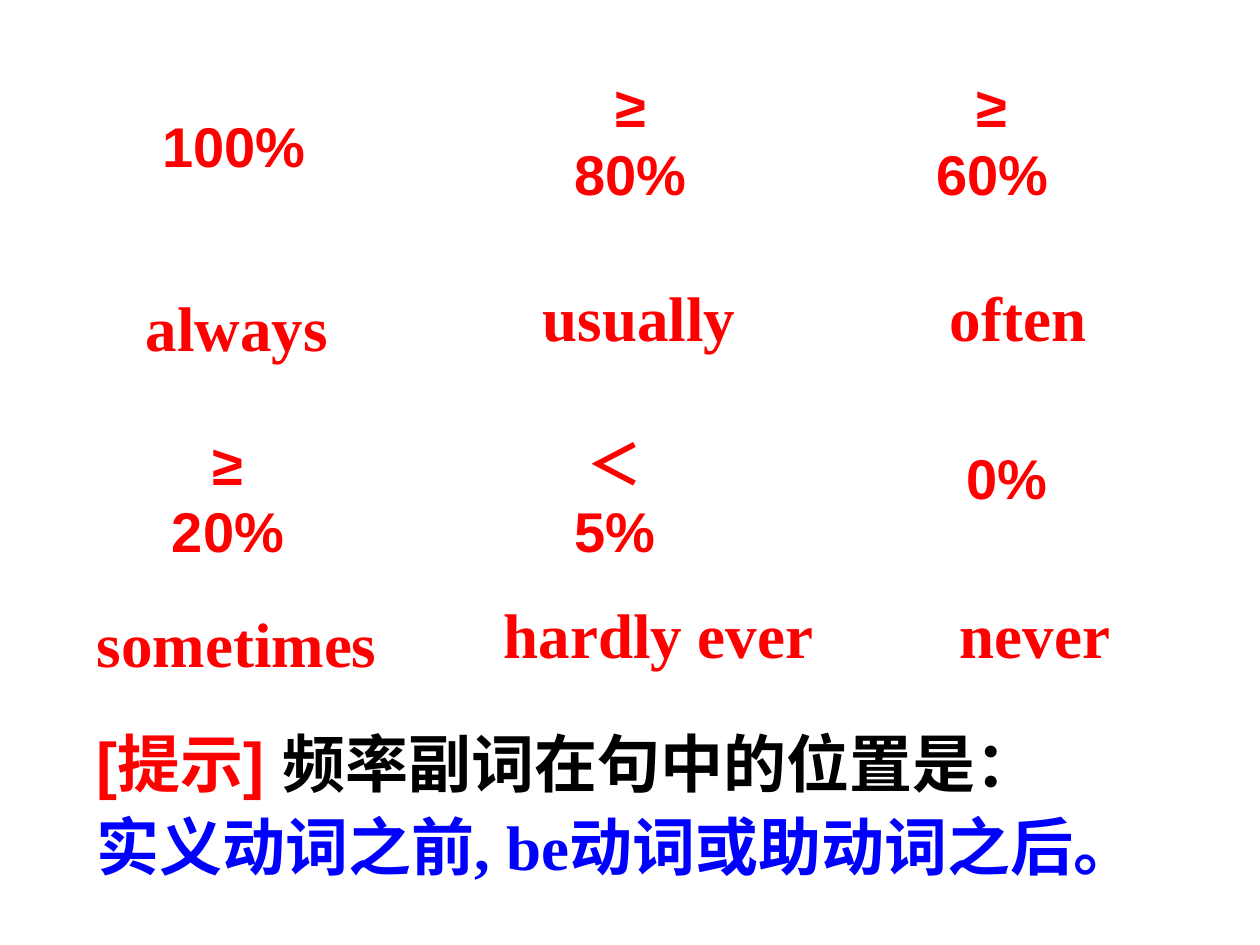
import pptx
import pptx.dml.color
import pptx.enum.shapes
import pptx.enum.text
import pptx.util

PX = 9144  # EMU in one px, 100 px to the inch
COLORS = {"red": "FF0000", "black": "000000", "blue": "0000FF"}


def add_span(para, text, font_name, size, color):
    span = para.add_run()
    span.text = text
    formats = {"name": font_name, "size": pptx.util.Pt(size), "bold": True}
    for name, value in formats.items():
        setattr(span.font, name, value)
    span.font.color.rgb = pptx.dml.color.RGBColor.from_string(COLORS[color])


deck = pptx.Presentation()
deck.slide_width, deck.slide_height = 1000 * PX, 750 * PX
page = deck.slides.add_slide(deck.slide_layouts[6])

# Share of the time: text, left, top, width, height
percentages = [
    ("100%", 91, 29, 189, 173),
    ("≥ 80%", 406, 28, 189, 165),
    ("≥ 60%", 697, 28, 181, 165),
    ("≥ 20%", 91, 312, 180, 164),
    ("＜ 5%", 398, 312, 180, 164),
    ("0%", 713, 304, 173, 150),
]
for text, *place in percentages:
    oval = page.shapes.add_shape(
        pptx.enum.shapes.MSO_SHAPE.OVAL, *(length * PX for length in place)
    )
    oval.shadow.inherit = False
    oval.fill.background()
    oval.line.fill.background()
    oval.text_frame.word_wrap = True
    oval.text_frame.vertical_anchor = pptx.enum.text.MSO_ANCHOR.MIDDLE
    para = oval.text_frame.paragraphs[0]
    para.alignment = pptx.enum.text.PP_ALIGN.CENTER
    add_span(para, text, "Arial", 32, "red")

# Adverb under each share: text, left, top, width
adverbs = [
    ("always", 106, 218, 181),
    ("usually", 421, 210, 189),
    ("often", 744, 210, 165),
    ("sometimes", 67, 469, 264),
    ("hardly ever", 390, 462, 283),
    ("never", 752, 462, 142),
]
for text, left, top, width in adverbs:
    box = page.shapes.add_textbox(left * PX, top * PX, width * PX, 70 * PX)
    box.text_frame.word_wrap = True
    box.text_frame.margin_top = 11 * PX
    add_span(box.text_frame.paragraphs[0], text, "Times New Roman", 36, "red")

# Grammar tip, one list of spans for each line
tip_lines = [
    [
        ("[提示] ", "Arial", "red"),
        ("频率副词在句中的位置是：", "Times New Roman", "black"),
    ],
    [("实义动词之前, be动词或助动词之后。", "Times New Roman", "blue")],
]
tip = page.shapes.add_textbox(67 * PX, 564 * PX, 878 * PX, 142 * PX).text_frame
tip.word_wrap = True
for index, spans in enumerate(tip_lines):
    para = tip.add_paragraph() if index else tip.paragraphs[0]
    para.line_spacing = 1.1
    for text, font_name, color in spans:
        add_span(para, text, font_name, 36, color)

deck.save("out.pptx")
